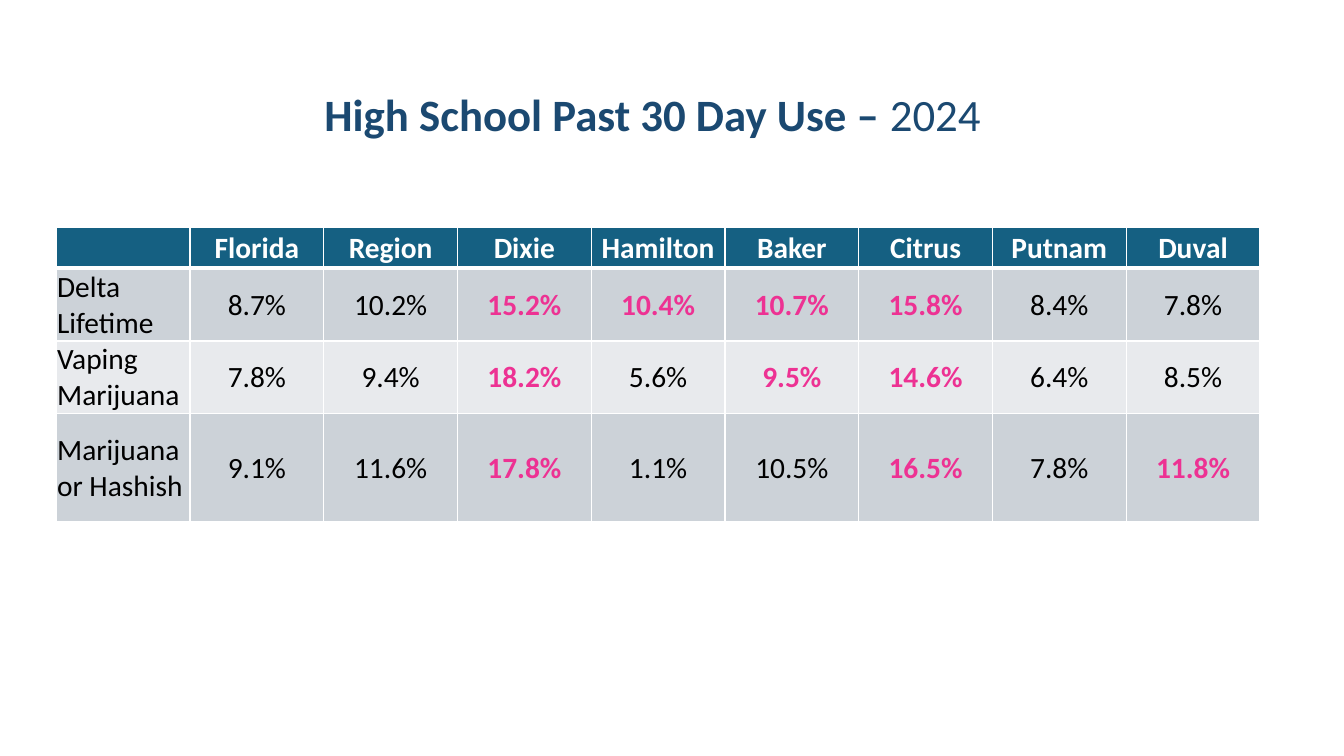
from lxml import etree
from pptx import Presentation
from pptx import util as u
from pptx.dml.color import RGBColor
from pptx.enum import text
from pptx.oxml import ns

COLORS = {
    "title": "1B4971",
    "header": "156082",
    "band_dark": "CCD2D8",
    "band_light": "E8EAED",
    "border": "FFFFFF",
    "header_text": "FFFFFF",
    "body_text": "000000",
    "above_region": "ED3293",
}
PLACES = ["Florida", "Region", "Dixie", "Hamilton", "Baker", "Citrus", "Putnam", "Duval"]
USE_RATES = {
    "Delta Lifetime": [8.7, 10.2, 15.2, 10.4, 10.7, 15.8, 8.4, 7.8],
    "Vaping Marijuana": [7.8, 9.4, 18.2, 5.6, 9.5, 14.6, 6.4, 8.5],
    "Marijuana or Hashish": [9.1, 11.6, 17.8, 1.1, 10.5, 16.5, 7.8, 11.8],
}
ROW_HEIGHTS = [1.04, 1.83, 1.83, 2.72]
ROW_FILLS = ["header", "band_dark", "band_light", "band_dark"]
COLUMN_WIDTH = 3.37


def style_font(font, size, color, bold):
    font.name = "Calibri"
    font.size = u.Pt(size)
    font.bold = bold
    font.color.rgb = RGBColor.from_string(COLORS[color])


def add_borders(cell, bottom_width):
    """Draw the four cell borders; they must come before the cell fill."""
    properties = cell._tc.get_or_add_tcPr()
    for side, width in [("L", 1), ("R", 1), ("T", 1), ("B", bottom_width)]:
        line = etree.SubElement(properties, ns.qn(f"a:ln{side}"), w=str(u.Pt(width)))
        fill = etree.SubElement(line, ns.qn("a:solidFill"))
        etree.SubElement(fill, ns.qn("a:srgbClr"), val=COLORS["border"])


deck = Presentation()
deck.slide_width = u.Cm(33.87)
deck.slide_height = u.Cm(19.05)
page = deck.slides.add_slide(deck.slide_layouts[6])

# Table
rows = [[""] + PLACES]
for substance, rates in USE_RATES.items():
    rows.append([substance] + [f"{rate}%" for rate in rates])

table = page.shapes.add_table(
    len(rows), len(rows[0]), u.Cm(1.42), u.Cm(5.72),
    u.Cm(COLUMN_WIDTH * len(rows[0])), u.Cm(sum(ROW_HEIGHTS)),
).table
for column in table.columns:
    column.width = u.Cm(COLUMN_WIDTH)

all_rates = list(USE_RATES.values())
for row_index, row in enumerate(rows):
    table.rows[row_index].height = u.Cm(ROW_HEIGHTS[row_index])
    is_header = row_index == 0
    for column_index, label in enumerate(row):
        cell = table.cell(row_index, column_index)
        cell.margin_left = cell.margin_right = cell.margin_top = u.Cm(0.02)
        cell.margin_bottom = 0
        cell.vertical_anchor = text.MSO_ANCHOR.MIDDLE
        add_borders(cell, 3 if is_header else 1)
        cell.fill.solid()
        cell.fill.fore_color.rgb = RGBColor.from_string(COLORS[ROW_FILLS[row_index]])

        color = "header_text" if is_header else "body_text"
        if not is_header and column_index > 2:
            rates = all_rates[row_index - 1]
            region_rate = rates[PLACES.index("Region")]
            if rates[column_index - 1] > region_rate:
                color = "above_region"
        para = cell.text_frame.paragraphs[0]
        para.text = label
        if is_header or column_index > 0:
            para.alignment = text.PP_ALIGN.CENTER
        else:
            para.alignment = text.PP_ALIGN.LEFT
        style_font(para.font, 21, color, color != "body_text")

# Title
title_box = page.shapes.add_textbox(u.Cm(3.53), u.Cm(2.06), u.Cm(26.09), u.Cm(1.63))
frame = title_box.text_frame
frame.word_wrap = True
frame.auto_size = text.MSO_AUTO_SIZE.SHAPE_TO_FIT_TEXT
para = frame.paragraphs[0]
para.alignment = text.PP_ALIGN.CENTER
for words, bold in [("High School Past 30 Day Use – ", True), ("2024 ", False)]:
    span = para.add_run()
    span.text = words
    style_font(span.font, 32, "title", bold)

deck.save("out.pptx")
